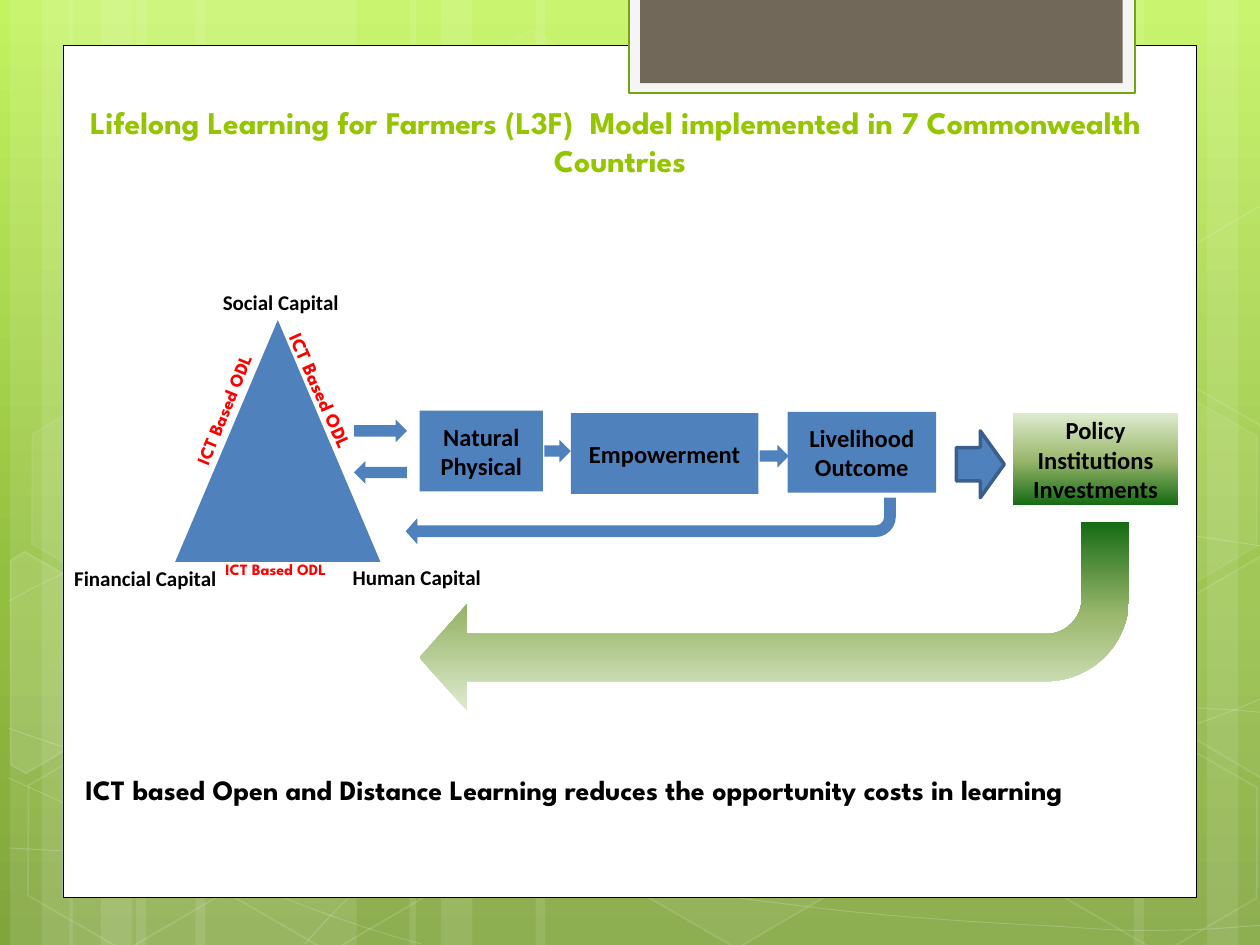
import math
from copy import deepcopy
from dataclasses import dataclass

from lxml import etree
from pptx import Presentation
from pptx.dml.color import RGBColor
from pptx.enum import shapes, text
from pptx.oxml.ns import qn
from pptx.util import Pt

PX = 9144  # EMU per px, 100 px to the inch
TILT = 30  # degrees, for every hexagon
MSO = shapes.MSO_SHAPE


@dataclass(frozen=True)
class Theme:
    white: str = "FFFFFF"
    black: str = "000000"
    blue: str = "4F81BD"
    dark_blue: str = "3A5F8C"
    lime: str = "94C600"
    red: str = "FF0000"
    tab: str = "71685A"
    tab_edge: str = "F5F5F5"
    tab_line: str = "74A510"
    backdrop: tuple = ((0, "C3F35F"), (0.62, "93BF3F"), (1, "81A53E"))
    policy: tuple = ((0, "DDEBCF"), (0.5, "9CB86E"), (1, "156B13"))
    body: str = "Calibri"
    display: str = "League Spartan"
    title_size: float = 18
    footer_size: float = 16
    box_size: float = 14
    label_size: float = 12
    side_sizes: tuple = (10.5, 11, 9)


T = Theme()


@dataclass(frozen=True)
class Box:
    x: int
    y: int
    w: int
    h: int

    def sub(self, x, y, w, h):
        return Box(self.x + x, self.y + y, w, h)

    def emu(self):
        return [v * PX for v in (self.x, self.y, self.w, self.h)]


def set_gradient(owner, fill, stops):
    """Vertical gradient with three stops, first one at the top."""
    fill.gradient()
    fill.gradient_angle = 270
    gs_list = owner.element.find(".//" + qn("a:gsLst"))
    gs_list.append(deepcopy(gs_list[-1]))
    for stop, (position, color) in zip(fill.gradient_stops, stops):
        stop.position = position
        stop.color.rgb = RGBColor.from_string(color)


def set_solid(fill, color, alpha=100):
    fill.solid()
    fill.fore_color.rgb = RGBColor.from_string(color)
    if alpha < 100:
        clr = fill._xPr.find(".//" + qn("a:srgbClr"))
        etree.SubElement(clr, qn("a:alpha")).set("val", str(alpha * 1000))


def style(sp, fill=None, line=None, width=1, fill_alpha=100, line_alpha=100):
    sp.shadow.inherit = False
    if fill is None:
        sp.fill.background()
    elif isinstance(fill, tuple):
        set_gradient(sp, sp.fill, fill)
    else:
        set_solid(sp.fill, fill, fill_alpha)
    if line is None:
        sp.line.fill.background()
    else:
        sp.line.width = Pt(width)
        set_solid(sp.line.fill, line, line_alpha)
    return sp


def add_shape(slide, kind, box, fill=None, **look):
    return style(slide.shapes.add_shape(kind, *box.emu()), fill, **look)


def write(sp, words, size, color=T.black, font=T.body, align="LEFT", anchor="TOP", wrap=True):
    tf = sp.text_frame
    tf.text = words
    tf.word_wrap = wrap
    tf.vertical_anchor = getattr(text.MSO_ANCHOR, anchor)
    for p in tf.paragraphs:
        p.alignment = getattr(text.PP_ALIGN, align)
        for r in p.runs:
            r.font.size, r.font.bold, r.font.name = Pt(size), True, font
            r.font.color.rgb = RGBColor.from_string(color)


def add_label(slide, box, words, size, rotation=0, **look):
    sp = slide.shapes.add_textbox(*box.emu())
    sp.rotation = rotation
    write(sp, words, size, **look)


def add_path(slide, box, points, close, **look):
    points = [(box.x + x, box.y + y) for x, y in points]
    builder = slide.shapes.build_freeform(*points[0], scale=PX)
    builder.add_line_segments(points[1:], close=close)
    return style(builder.convert_to_shape(), line=T.white, **look)


def add_curve(slide, box, knots):
    """Chain of cubic Bezier segments, three knots to a segment."""
    sp = add_path(slide, box, knots, False, width=0.5, line_alpha=20)
    lines = list(sp.element.iter(qn("a:lnTo")))
    for first, second, end in zip(lines[::3], lines[1::3], lines[2::3]):
        first.tag = qn("a:cubicBezTo")
        for other in (second, end):
            first.append(other[0])
            other.getparent().remove(other)


def add_cut_hexagon(slide, box, center, points, **look):
    """Draw the outline upright, then tilt it like the whole hexagons."""
    cx, cy = center
    cos, sin = math.cos(math.radians(TILT)), math.sin(math.radians(TILT))
    upright = [(round(cx + (x - cx) * cos + (y - cy) * sin),
                round(cy - (x - cx) * sin + (y - cy) * cos)) for x, y in points]
    add_path(slide, box, upright, True, line_alpha=12, **look).rotation = TILT


def draw_backdrop(slide, box):
    set_gradient(slide, slide.background.fill, T.backdrop)
    # Translucent vertical bands
    for x, w in ((108, 175), (8, 50), (33, 83), (155, 175), (55, 50), (80, 83), (733, 175),
                 (958, 50), (900, 83), (425, 308), (325, 50), (350, 83)):
        add_shape(slide, MSO.RECTANGLE, box.sub(x, 0, w, box.h), T.white, fill_alpha=10)
    # Fine sweeping curves
    sweeps = (
        [(7, 673), (61, 676), (115, 679), (190, 678), (265, 677), (358, 675), (458, 665),
         (558, 655), (700, 636), (792, 617), (883, 598), (977, 568), (1007, 551)],
        [(7, 477), (36, 461), (65, 446), (121, 431), (178, 416), (259, 394), (347, 387),
         (436, 380), (544, 379), (654, 387), (764, 395), (947, 426), (1007, 434)],
        [(6, 617), (127, 672), (247, 727), (334, 749)],
        [(7, 578), (38, 589), (70, 600), (128, 616), (186, 631), (273, 656), (357, 673),
         (440, 690), (545, 708), (628, 718), (711, 729), (800, 733), (853, 736),
         (905, 740), (919, 738), (945, 738), (971, 737), (989, 735), (1007, 734)],
        [(242, 749), (260, 729), (278, 709), (302, 691), (326, 673), (360, 653), (388, 639),
         (416, 625), (433, 619), (470, 609), (506, 599), (573, 585), (608, 578),
         (644, 571), (649, 571), (680, 569), (711, 566), (760, 563), (794, 562),
         (829, 561), (886, 562), (886, 562), (908, 562), (930, 562), (953, 562),
         (971, 563), (988, 564), (997, 565), (1006, 566), (1003, 565), (1006, 566)])
    for knots in sweeps:
        add_curve(slide, box, knots)
    # Hexagons: left, top, fill opacity, line opacity
    for x, y, fill_alpha, line_alpha in ((334, 36, 4, 8), (497, 589, 6, 12), (11, 591, 0, 12),
                                         (14, 312, 7, 8), (174, 592, 0, 12), (753, 453, 10, 12),
                                         (834, 593, 0, 12), (834, 314, 7, 8)):
        sp = add_shape(slide, MSO.HEXAGON, box.sub(x, y, 175, 152),
                       T.white if fill_alpha else None, fill_alpha=fill_alpha,
                       line=T.white, line_alpha=line_alpha)
        sp.adjustments[0] = 0.285
        sp.rotation = TILT
    # Hexagons cut off by the slide's edges
    left = [(8, 445), (19, 438), (96, 482), (95, 570), (20, 614), (8, 607)]
    right = [(926, 485), (1001, 441), (1009, 446), (1009, 613), (1002, 617), (926, 573)]
    upper_right = [(x, y - 278) for x, y in right]
    for center, points, fill, alpha in (((36, 535), left, T.white, 10),
                                        ((985, 520), right, T.white, 4),
                                        ((985, 241), upper_right, None, 100)):
        add_cut_hexagon(slide, box, center, points, fill=fill, fill_alpha=alpha)


def draw_panel(slide, box):
    add_shape(slide, MSO.RECTANGLE, box, T.white, line=T.black, width=0.5)
    # Tab hanging from the top edge
    add_shape(slide, MSO.RECTANGLE, box.sub(449, -38, 402, 76), T.tab_edge,
              line=T.tab_line, width=1.25)
    add_shape(slide, MSO.RECTANGLE, box.sub(458, -38, 383, 68), T.tab)


def draw_capitals(slide, box):
    add_shape(slide, MSO.ISOSCELES_TRIANGLE, box.sub(90, 29, 163, 192), T.blue)
    # Corner labels
    for x, y, w, words in ((118, 0, 113, "Social Capital"), (221, 218, 124, "Human Capital"),
                           (0, 219, 135, "Financial Capital")):
        add_label(slide, box.sub(x, y, w, 30), words, T.label_size, wrap=False)
    # Labels along the sides
    sides = ((68, 78, 129, 29, 292.2), (143, 76, 129, 29, 65.9), (120, 214, 109, 25, 0))
    for (*place, rotation), size in zip(sides, T.side_sizes):
        add_label(slide, box.sub(*place), "ICT Based ODL", size, rotation,
                  color=T.red, font=T.display, wrap=False)


def add_return_arrow(slide, box, fill):
    sp = add_shape(slide, MSO.BENT_ARROW, box, fill)
    sp.rotation = 180
    for i, value in enumerate((0.25, 0.281, 0.25, 0.438)):
        sp.adjustments[i] = value


def draw_flow(slide, box):
    # Stages
    for x, y, w, h, words, fill in ((52, 0, 98, 64, "Natural\nPhysical", T.blue),
                                    (172, 2, 149, 64, "Empowerment", T.blue),
                                    (344, 1, 118, 64, "Livelihood Outcome", T.blue),
                                    (523, 2, 131, 73, "Policy\nInstitutions\nInvestments",
                                     T.policy)):
        sp = add_shape(slide, MSO.RECTANGLE, box.sub(x, y, w, h), fill)
        write(sp, words, T.box_size, align="CENTER", anchor="MIDDLE")
    # Arrows between stages
    for kind, x, y, w in ((MSO.LEFT_ARROW, 0, 40, 42), (MSO.RIGHT_ARROW, 0, 7, 42),
                          (MSO.RIGHT_ARROW, 151, 23, 21), (MSO.RIGHT_ARROW, 322, 27, 23)):
        add_shape(slide, kind, box.sub(x, y, w, 18), T.blue)
    add_shape(slide, MSO.RIGHT_ARROW, box.sub(478, 16, 38, 53), T.blue,
              line=T.dark_blue, width=2)
    # Feedback to the capitals
    add_return_arrow(slide, box.sub(41, 69, 389, 37), T.blue)
    add_return_arrow(slide, box.sub(52, 88, 563, 150), T.policy)


def main():
    prs = Presentation()
    prs.slide_width, prs.slide_height = 1000 * PX, 750 * PX
    slide = prs.slides.add_slide(prs.slide_layouts[6])
    draw_backdrop(slide, Box(0, 0, 1000, 750))
    draw_panel(slide, Box(50, 36, 900, 676))
    add_label(slide, Box(42, 82, 900, 65),
              "Lifelong Learning for Farmers (L3F)  Model implemented in 7 Commonwealth  Countries",
              T.title_size, color=T.lime, font=T.display, align="CENTER", anchor="BOTTOM")
    draw_capitals(slide, Box(49, 225, 345, 248))
    draw_flow(slide, Box(281, 326, 654, 238))
    add_label(slide, Box(58, 608, 892, 37),
              "ICT based Open and Distance Learning reduces the opportunity costs in learning",
              T.footer_size, font=T.display)
    prs.save("out.pptx")


if __name__ == "__main__":
    main()
